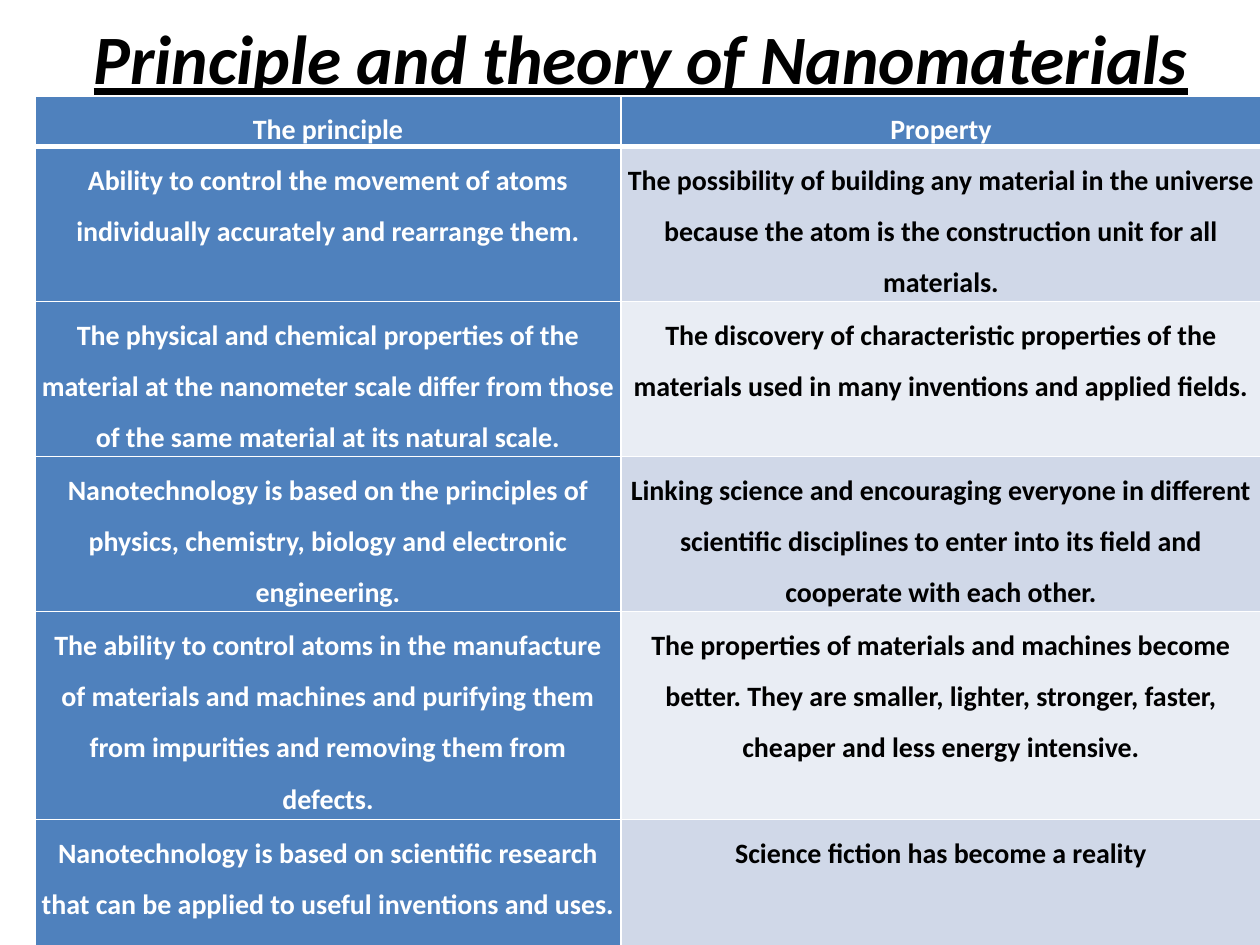
from lxml import etree
from pptx import Presentation
from pptx import util as u
from pptx.dml.color import RGBColor
from pptx.enum import text
from pptx.oxml.ns import qn

BLUE, PALE, LIGHT = "4F81BD", "D0D8E8", "E9EDF4"
WHITE, BLACK = "FFFFFF", "000000"

ROWS = [
    ("The principle", "Property"),
    ("Ability to control the movement of atoms individually accurately and rearrange them.",
     "The possibility of building any material in the universe because the atom is the "
     "construction unit for all materials."),
    ("The physical and chemical properties of the material at the nanometer scale differ "
     "from those of the same material at its natural scale.",
     "The discovery of characteristic properties of the materials used in many inventions "
     "and applied fields."),
    ("Nanotechnology is based on the principles of physics, chemistry, biology and "
     "electronic engineering.",
     "Linking science and encouraging everyone in different scientific disciplines to enter "
     "into its field and cooperate with each other."),
    ("The ability to control atoms in the manufacture of materials and machines and "
     "purifying them from impurities and removing them from defects.",
     "The properties of materials and machines become better. They are smaller, lighter, "
     "stronger, faster, cheaper and less energy intensive."),
    ("Nanotechnology is based on scientific research that can be applied to useful "
     "inventions and uses.",
     "Science fiction has become a reality"),
]
WIDTHS = [586, 640]
HEIGHTS = [48, 155, 155, 155, 208, 155]


def px(n):
    return u.Emu(round(n * 914400 / 126))


def color(code):
    return RGBColor.from_string(code)


class Deck:
    """Holds the text style and the current slide."""

    def __init__(self, face):
        self.face = face
        self.prs = Presentation()
        self.prs.slide_width, self.prs.slide_height = px(1260), px(945)
        self.slide = self.prs.slides.add_slide(self.prs.slide_layouts[6])

    def style(self, para, size, code):
        para.alignment = text.PP_ALIGN.CENTER
        font = para.font
        font.name, font.size, font.bold = self.face, u.Pt(size), True
        font.color.rgb = color(code)
        return font

    def title(self, words, x, y, w, h):
        frame = self.slide.shapes.add_textbox(px(x), px(y), px(w), px(h)).text_frame
        frame.word_wrap = True
        frame.vertical_anchor = text.MSO_ANCHOR.MIDDLE
        frame.text = words
        font = self.style(frame.paragraphs[0], 39.6, BLACK)
        font.italic = font.underline = True

    def edge(self, cell, side, width):
        line = etree.SubElement(cell._tc.get_or_add_tcPr(), qn("a:ln" + side),
                                w=str(u.Pt(width)))
        fill = etree.SubElement(line, qn("a:solidFill"))
        etree.SubElement(fill, qn("a:srgbClr"), val=WHITE)

    def cell(self, cell, words, fill, ink, top, base):
        for side, width in (("L", 1), ("R", 1), ("T", top), ("B", base)):
            self.edge(cell, side, width)
        cell.fill.solid()
        cell.fill.fore_color.rgb = color(fill)
        cell.margin_left = cell.margin_right = px(6)
        cell.margin_top = cell.margin_bottom = 0
        cell.text = words
        para = cell.text_frame.paragraphs[0]
        para.line_spacing = 1.5
        self.style(para, 16, ink)

    def table(self, rows, x, y, widths, heights):
        grid = self.slide.shapes.add_table(
            len(rows), len(widths), px(x), px(y), px(sum(widths)), px(sum(heights))).table
        grid.first_col = True
        for col, w in zip(grid.columns, widths):
            col.width = px(w)
        for r, (row, h) in enumerate(zip(rows, heights)):
            grid.rows[r].height = px(h)
            for c, words in enumerate(row):
                head = r == 0 or c == 0
                band = PALE if r % 2 else LIGHT
                self.cell(grid.cell(r, c), words, BLUE if head else band,
                          WHITE if head else BLACK,
                          3 if r == 1 else 1, 3 if r == 0 else 1)


def main():
    deck = Deck("Calibri")
    deck.title("Principle and theory of Nanomaterials", 74, 1, 1134, 112)
    deck.table(ROWS, 35, 96, WIDTHS, HEIGHTS)
    deck.prs.save("out.pptx")


if __name__ == "__main__":
    main()
